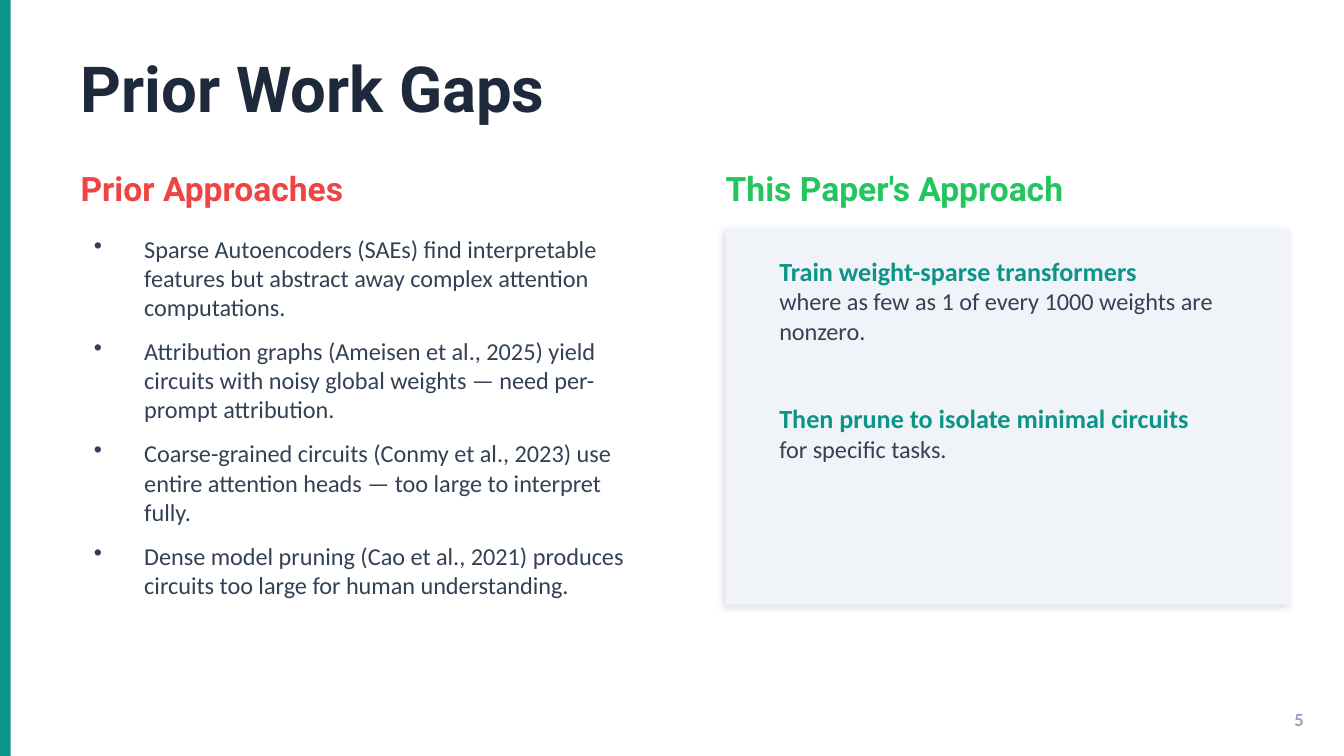
from dataclasses import dataclass

from lxml import etree
from pptx import Presentation
from pptx.dml.color import RGBColor
from pptx.enum.shapes import MSO_SHAPE
from pptx.enum.text import MSO_ANCHOR, MSO_AUTO_SIZE, PP_ALIGN
from pptx.oxml.ns import qn
from pptx.shapes.autoshape import Shape
from pptx.slide import Slide
from pptx.text.text import TextFrame, _Paragraph
from pptx.util import Emu, Inches, Pt

RECTANGLE = MSO_SHAPE.RECTANGLE
TOP, MIDDLE = MSO_ANCHOR.TOP, MSO_ANCHOR.MIDDLE
LEFT, RIGHT = PP_ALIGN.LEFT, PP_ALIGN.RIGHT
NO_AUTOFIT = MSO_AUTO_SIZE.NONE

TEAL = RGBColor(0x0D, 0x94, 0x88)
NAVY = RGBColor(0x1E, 0x29, 0x3B)
SLATE = RGBColor(0x33, 0x41, 0x55)
GRAY = RGBColor(0x94, 0xA3, 0xB8)
RED = RGBColor(0xEF, 0x44, 0x44)
GREEN = RGBColor(0x22, 0xC5, 0x5E)
PANEL = RGBColor(0xF0, 0xF4, 0xF8)

HEADING_FONT = "Roboto"
BODY_FONT = "Calibri"
SLIDE_WIDTH = 10
SLIDE_HEIGHT = SLIDE_WIDTH * 9 / 16
COLUMN_WIDTH = 4.2
HEADING_TOP = 1.2
CONTENT_TOP = 1.7
CONTENT_HEIGHT = 2.8
BULLET_INDENT = Pt(27)


@dataclass(frozen=True)
class Style:
    font: str
    size: int
    color: RGBColor
    bold: bool = False


@dataclass(frozen=True)
class Column:
    heading: str
    left: float
    color: RGBColor


@dataclass(frozen=True)
class Step:
    action: str
    detail: str


TITLE = Style(HEADING_FONT, 34, NAVY, True)
BODY = Style(BODY_FONT, 13, SLATE)
ACTION = Style(BODY_FONT, 14, TEAL, True)
PAGE_NUMBER = Style(BODY_FONT, 10, GRAY, True)

PRIOR = Column("Prior Approaches", 0.6, RED)
PAPER = Column("This Paper's Approach", 5.4, GREEN)

LIMITATIONS = [
    "Sparse Autoencoders (SAEs) find interpretable features but abstract away complex attention computations.",
    "Attribution graphs (Ameisen et al., 2025) yield circuits with noisy global weights — need per-prompt attribution.",
    "Coarse-grained circuits (Conmy et al., 2023) use entire attention heads — too large to interpret fully.",
    "Dense model pruning (Cao et al., 2021) produces circuits too large for human understanding.",
]
STEPS = [
    Step("Train weight-sparse transformers", "where as few as 1 of every 1000 weights are nonzero."),
    Step("Then prune to isolate minimal circuits", "for specific tasks."),
]


def place(shape: Shape, left: float, top: float, width: float, height: float) -> None:
    shape.left, shape.top = Inches(left), Inches(top)
    shape.width, shape.height = Inches(width), Inches(height)


def set_frame(frame: TextFrame, anchor: MSO_ANCHOR, inset: bool = True) -> None:
    frame.word_wrap = True
    frame.auto_size = NO_AUTOFIT
    frame.vertical_anchor = anchor
    if not inset:
        frame.margin_left = frame.margin_right = Emu(0)
        frame.margin_top = frame.margin_bottom = Emu(0)


def add_text_box(slide: Slide, left: float, top: float, width: float, height: float,
                 anchor: MSO_ANCHOR = MIDDLE, inset: bool = True) -> TextFrame:
    frame = slide.shapes.add_textbox(
        Inches(left), Inches(top), Inches(width), Inches(height)).text_frame
    set_frame(frame, anchor, inset)
    return frame


def add_run(paragraph: _Paragraph, words: str, style: Style) -> None:
    run = paragraph.add_run()
    run.text = words
    run.font.name = style.font
    run.font.size = Pt(style.size)
    run.font.bold = style.bold
    run.font.color.rgb = style.color


def next_paragraph(frame: TextFrame, index: int) -> _Paragraph:
    return frame.add_paragraph() if index else frame.paragraphs[0]


def add_rectangle(slide: Slide, left: float, top: float, width: float, height: float,
                  color: RGBColor) -> Shape:
    rectangle = slide.shapes.add_shape(
        RECTANGLE, Inches(left), Inches(top), Inches(width), Inches(height))
    rectangle.shadow.inherit = False
    rectangle.fill.solid()
    rectangle.fill.fore_color.rgb = color
    rectangle.line.fill.background()
    return rectangle


def add_soft_shadow(shape: Shape) -> None:
    effects = shape.element.spPr.find(qn("a:effectLst"))
    shadow = etree.SubElement(effects, qn("a:outerShdw"), blurRad=str(Pt(4)),
                              dist=str(Pt(2)), dir=str(135 * 60000),
                              algn="bl", rotWithShape="0")
    black = etree.SubElement(shadow, qn("a:srgbClr"), val="000000")
    etree.SubElement(black, qn("a:alpha"), val="12000")


def add_title(slide: Slide, words: str) -> None:
    title = slide.shapes.title
    place(title, 0.6, 0.3, 8.5, 0.7)
    set_frame(title.text_frame, MIDDLE, inset=False)
    paragraph = title.text_frame.paragraphs[0]
    paragraph.alignment = LEFT
    add_run(paragraph, words, TITLE)


def add_heading(slide: Slide, column: Column) -> None:
    frame = add_text_box(slide, column.left, HEADING_TOP, COLUMN_WIDTH, 0.4, inset=False)
    add_run(frame.paragraphs[0], column.heading,
            Style(HEADING_FONT, 18, column.color, True))


def add_bullets(slide: Slide, column: Column, items: list[str]) -> None:
    frame = add_text_box(slide, column.left, CONTENT_TOP, COLUMN_WIDTH, CONTENT_HEIGHT)
    for index, item in enumerate(items):
        paragraph = next_paragraph(frame, index)
        properties = paragraph._p.get_or_add_pPr()
        properties.set("marL", str(BULLET_INDENT))
        properties.set("indent", str(-BULLET_INDENT))
        etree.SubElement(properties, qn("a:buSzPct"), val="100000")
        etree.SubElement(properties, qn("a:buChar"), char="•")
        paragraph.space_after = Pt(8)
        add_run(paragraph, item, BODY)


def add_steps(slide: Slide, column: Column, steps: list[Step]) -> None:
    panel = add_rectangle(slide, column.left, CONTENT_TOP, COLUMN_WIDTH, CONTENT_HEIGHT, PANEL)
    add_soft_shadow(panel)
    frame = add_text_box(slide, column.left + 0.3, CONTENT_TOP + 0.15,
                         COLUMN_WIDTH - 0.6, 2.9, TOP)
    for index, step in enumerate(steps):
        action = next_paragraph(frame, index)
        if index:
            action.space_before = Pt(31)
        add_run(action, step.action, ACTION)
        add_run(frame.add_paragraph(), step.detail, BODY)


def add_page_number(slide: Slide, number: int) -> None:
    paragraph = add_text_box(slide, 9.2, 5.2, 0.6, 0.3).paragraphs[0]
    paragraph.alignment = RIGHT
    add_run(paragraph, str(number), PAGE_NUMBER)


def main() -> None:
    presentation = Presentation()
    presentation.slide_width = Inches(SLIDE_WIDTH)
    presentation.slide_height = Inches(SLIDE_HEIGHT)
    slide = presentation.slides.add_slide(presentation.slide_layouts[5])

    add_rectangle(slide, 0, 0, 0.08, SLIDE_HEIGHT, TEAL)
    add_title(slide, "Prior Work Gaps")
    for column in (PRIOR, PAPER):
        add_heading(slide, column)
    add_bullets(slide, PRIOR, LIMITATIONS)
    add_steps(slide, PAPER, STEPS)
    add_page_number(slide, 5)

    presentation.save("out.pptx")


if __name__ == "__main__":
    main()
